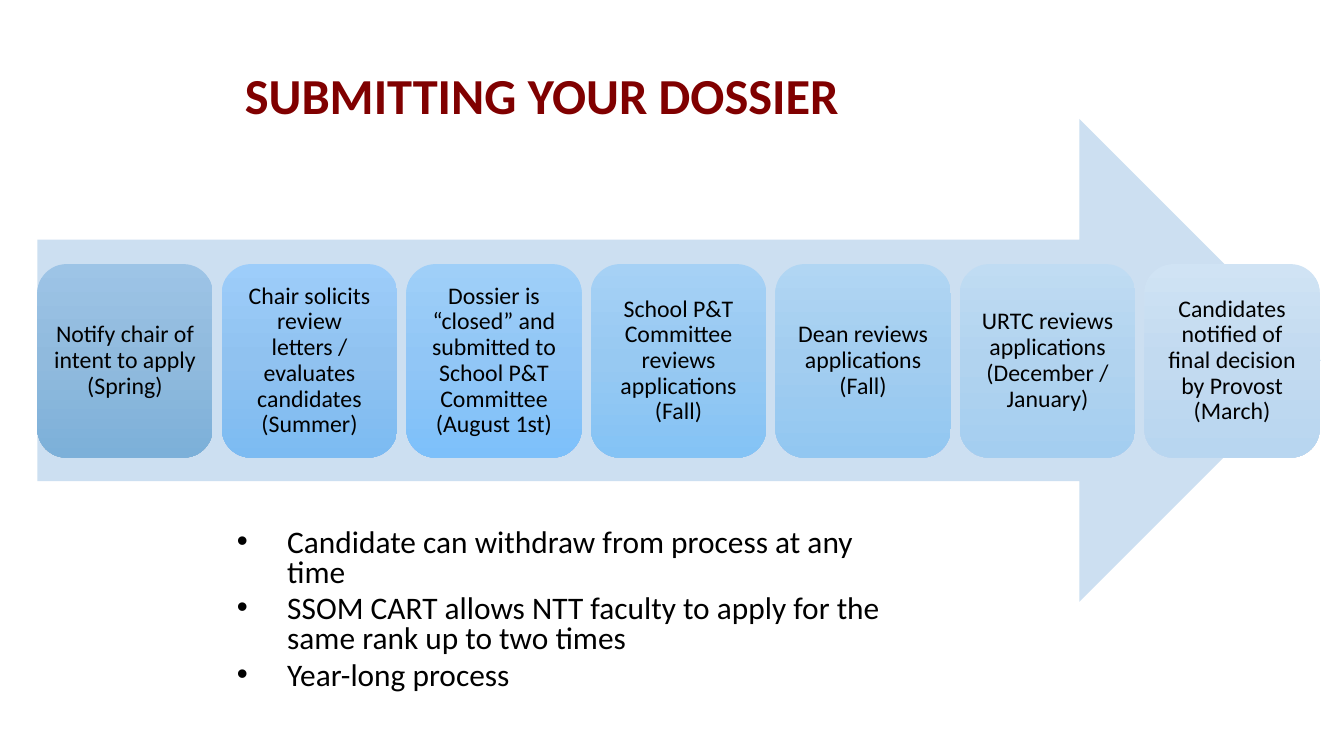
from copy import deepcopy

from lxml import etree
from pptx import Presentation
from pptx.dml.color import RGBColor
from pptx.enum.shapes import MSO_SHAPE
from pptx.enum.text import MSO_ANCHOR, PP_ALIGN
from pptx.oxml.ns import qn
from pptx.util import Inches, Pt

ARROW, ROUNDED = MSO_SHAPE.RIGHT_ARROW, MSO_SHAPE.ROUNDED_RECTANGLE
TOP, MIDDLE = MSO_ANCHOR.TOP, MSO_ANCHOR.MIDDLE
LEFT, CENTER = PP_ALIGN.LEFT, PP_ALIGN.CENTER

BLACK = RGBColor(0, 0, 0)
MAROON = RGBColor(0x80, 0, 0)
PALE_BLUE = RGBColor(0xCC, 0xDF, 0xF1)

FIRST_LEFT, COLUMN = 0.37, 1.83
STEP_TOP, STEP_WIDTH, STEP_HEIGHT = 2.62, 1.74, 1.92

TITLE_FONT = {"name": "Calibri", "size": Pt(36), "bold": True}
STEP_FONT = {"name": "Calibri", "size": Pt(17)}
NOTE_FONT = {"name": "Calibri", "size": Pt(22.4)}

# Each step: wording, then gradient colours from top to bottom
STEPS = [
    ("Notify chair of intent to apply (Spring)", "9DC4E6 90BADD 7CB0D9"),
    ("Chair solicits review letters / evaluates candidates (Summer)",
     "9DCDFA 90C2F0 7CBBF2"),
    ("Dossier is “closed” and submitted to School P&T Committee (August 1st)",
     "9FCFF8 91C6F6 7DC0FA"),
    ("School P&T Committee reviews applications (Fall)",
     "A6D1F5 97C9F2 84C3F5"),
    ("Dean reviews applications (Fall)", "B1D6F3 A2CDF0 92C7F1"),
    ("URTC reviews applications (December / January)",
     "C0DCF3 B1D3EF A4CEF0"),
    ("Candidates notified of final decision by Provost (March)",
     "D0E3F4 C2DAF0 B8D6F0"),
]
NOTES = [
    "Candidate can withdraw from process at any time",
    "SSOM CART allows NTT faculty to apply for the same rank up to two times",
    "Year-long process",
]


def set_attributes(target, values):
    for name, value in values.items():
        setattr(target, name, value)


def write(box, lines, font, color=BLACK, frame=None, layout=None,
          gap=0, bullet=False):
    """Fill a box with one paragraph per line; gap goes between paragraphs."""
    text_frame = box.text_frame
    set_attributes(text_frame, {"word_wrap": True, **(frame or {})})
    for index, line in enumerate(lines):
        para = text_frame.add_paragraph() if index else text_frame.paragraphs[0]
        set_attributes(para, layout or {})
        para.space_before = Pt(gap if index else 0)
        if bullet:
            add_bullet(para)
        span = para.add_run()
        span.text = line
        set_attributes(span.font, font)
        span.font.color.rgb = color


def add_bullet(para):
    properties = para._p.get_or_add_pPr()
    properties.set("marL", str(Inches(0.5)))
    properties.set("indent", str(-Inches(0.5)))
    etree.SubElement(properties, qn("a:buFont")).set("typeface", "Arial")
    etree.SubElement(properties, qn("a:buChar")).set("char", "•")


def add_plain_shape(page, kind, *place):
    shape = page.shapes.add_shape(kind, *map(Inches, place))
    shape.shadow.inherit = False
    shape.line.fill.background()
    return shape


def add_text_box(page, *place):
    return page.shapes.add_textbox(*map(Inches, place))


def shade(shape, colors):
    """Apply a top-to-bottom gradient of three evenly spaced colours."""
    shape.fill.gradient()
    shape.fill.gradient_angle = 270
    stop_list = shape._element.spPr.find(".//" + qn("a:gsLst"))
    stop_list.insert(1, deepcopy(stop_list[0]))
    for index, (stop, color) in enumerate(
            zip(shape.fill.gradient_stops, colors.split())):
        stop.position = index / 2
        stop.color.rgb = RGBColor.from_string(color)


def add_step(page, column, wording, colors):
    step = add_plain_shape(page, ROUNDED, FIRST_LEFT + column * COLUMN,
                           STEP_TOP, STEP_WIDTH, STEP_HEIGHT)
    shade(step, colors)
    sides = ("left", "top", "right", "bottom")
    frame = {f"margin_{side}": Inches(0.07) for side in sides}
    write(step, [wording], STEP_FONT,
          frame={**frame, "vertical_anchor": MIDDLE},
          layout={"alignment": CENTER, "line_spacing": 0.9})


def main():
    deck = Presentation()
    deck.slide_width, deck.slide_height = Inches(13.33), Inches(7.5)
    page = deck.slides.add_slide(deck.slide_layouts[6])

    arrow = add_plain_shape(page, ARROW, FIRST_LEFT, 1.18, 12.73, 4.79)
    arrow.fill.solid()
    arrow.fill.fore_color.rgb = PALE_BLUE

    for column, (wording, colors) in enumerate(STEPS):
        add_step(page, column, wording, colors)

    write(add_text_box(page, 2.25, 5.2, 6.88, 1.82), NOTES, NOTE_FONT,
          frame={"vertical_anchor": TOP},
          layout={"alignment": LEFT, "line_spacing": 0.8},
          gap=4.5, bullet=True)
    write(add_text_box(page, 2.33, 0.35, 8.72, 1.25),
          ["SUBMITTING YOUR DOSSIER"], TITLE_FONT, MAROON,
          frame={"vertical_anchor": MIDDLE},
          layout={"alignment": LEFT, "line_spacing": 0.9})

    deck.save("out.pptx")


if __name__ == "__main__":
    main()
